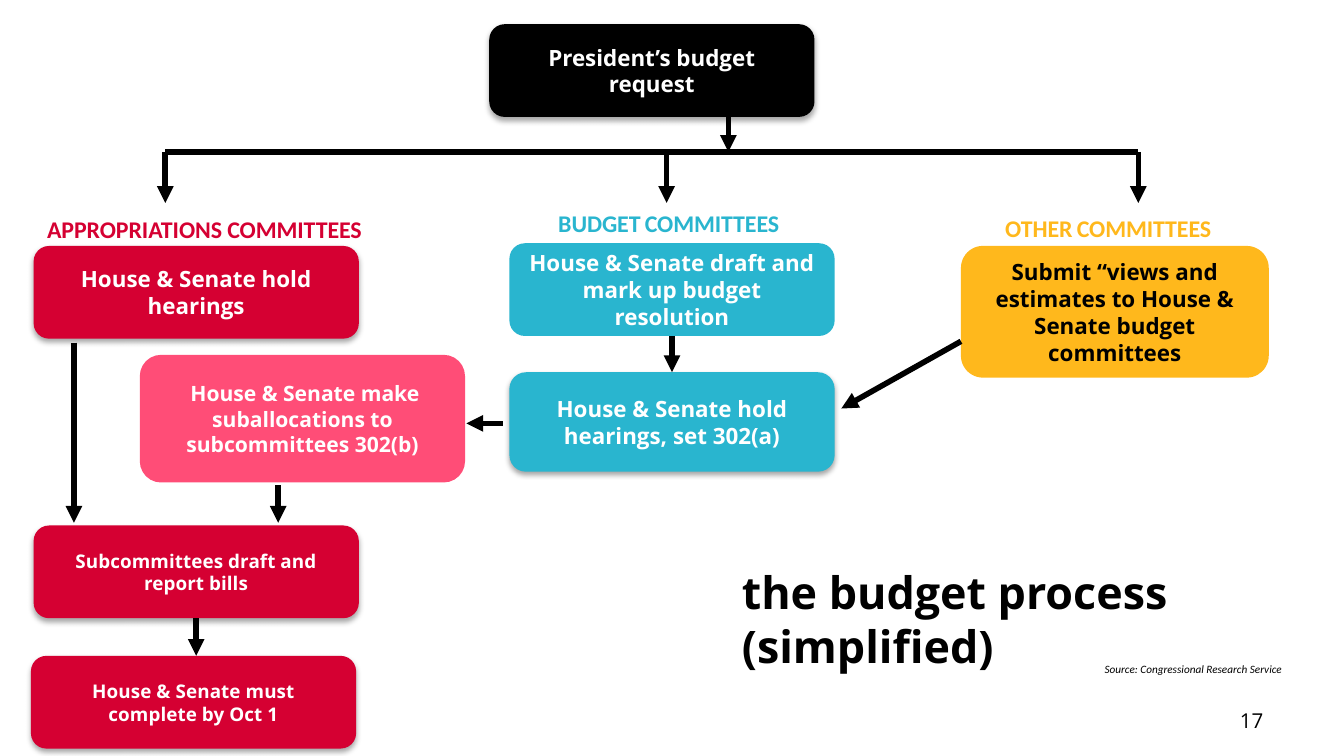
from lxml import etree
from pptx import Presentation
from pptx.dml.color import RGBColor
from pptx.enum.shapes import MSO_CONNECTOR, MSO_SHAPE
from pptx.enum.text import MSO_ANCHOR, MSO_AUTO_SIZE, PP_ALIGN
from pptx.oxml import parse_xml
from pptx.oxml.ns import nsdecls, qn
from pptx.util import Inches, Pt

STRAIGHT, ROUNDED = MSO_CONNECTOR.STRAIGHT, MSO_SHAPE.ROUNDED_RECTANGLE
LEFT, CENTER, RIGHT = PP_ALIGN.LEFT, PP_ALIGN.CENTER, PP_ALIGN.RIGHT
TOP, MIDDLE = MSO_ANCHOR.TOP, MSO_ANCHOR.MIDDLE
BLACK, WHITE, RED, PINK = "000000", "FFFFFF", "D50032", "FF4D77"
TEAL, GOLD = "29B5CF", "FFB81C"
SHADOW = (
    f'<a:effectLst {nsdecls("a")}><a:outerShdw blurRad="39370" dist="22860" '
    'dir="5400000" rotWithShape="0"><a:srgbClr val="000000">'
    '<a:alpha val="35000"/></a:srgbClr></a:outerShdw></a:effectLst>'
)


def rgb(value):
    return RGBColor.from_string(value)


def write(s, runs, color, align, anchor):
    tf = s.text_frame
    frame = {"word_wrap": True, "auto_size": MSO_AUTO_SIZE.NONE, "vertical_anchor": anchor}
    for name, value in frame.items():
        setattr(tf, name, value)
    p = tf.paragraphs[0]
    p.alignment = align
    for text, font in runs:
        r = p.add_run()
        r.text = text
        r.font.color.rgb = rgb(color)
        for name, value in font.items():
            setattr(r.font, name, value)


prs = Presentation()
prs.slide_width = Inches(10)
prs.slide_height = Inches(10) * 9 // 16
slide = prs.slides.add_slide(prs.slide_layouts[5])

title = slide.shapes.title
title.left, title.top, title.width, title.height = map(Inches, (5.42, 4.42, 4.32, 0.37))
title_font = {"name": "Open Sans", "size": Pt(24), "bold": True}
write(title, [("the budget process (simplified)", title_font)], BLACK, LEFT, MIDDLE)

boxes = {}
for key, text, at, fill, color, size, shadow in [
    ("request", "President’s budget request", (3.64, 0.18, 2.42, 0.69), BLACK, WHITE, 12, True),
    ("hearings", "House & Senate hold hearings", (0.25, 1.83, 2.42, 0.69), RED, WHITE, 12, True),
    ("bills", "Subcommittees draft and report bills", (0.25, 3.91, 2.42, 0.69), RED, WHITE, 10.13, True),
    ("deadline", "House & Senate must complete by Oct 1", (0.23, 4.88, 2.42, 0.69), RED, WHITE, 10.13, True),
    ("resolution", "House & Senate draft and mark up budget resolution", (3.79, 1.81, 2.42, 0.69), TEAL, WHITE, 12, False),
    ("302a", "House & Senate hold hearings, set 302(a)", (3.79, 2.77, 2.42, 0.74), TEAL, WHITE, 12, True),
    ("302b", "House & Senate make suballocations to subcommittees 302(b)", (1.04, 2.64, 2.42, 0.95), PINK, WHITE, 11.25, False),
    ("views", "Submit “views and estimates to House & Senate budget committees", (7.15, 1.83, 2.29, 0.98), GOLD, BLACK, 12, False),
]:
    s = slide.shapes.add_shape(ROUNDED, *map(Inches, at))
    s.shadow.inherit = False
    s.fill.solid()
    s.fill.fore_color.rgb = rgb(fill)
    s.line.fill.background()
    if shadow:
        effects = s._element.spPr.find(qn("a:effectLst"))
        effects.getparent().replace(effects, parse_xml(SHADOW))
    font = {"name": "Open Sans", "size": Pt(size), "bold": True}
    runs = [(text, font)]
    if key == "302b":
        runs.insert(0, (" ", font | {"name": "Calibri"}))
    write(s, runs, color, CENTER, MIDDLE)
    boxes[key] = s

label_font = {"name": "Calibri", "size": Pt(12.75), "bold": True}
gap_font = {"name": "Calibri", "size": Pt(10.5), "bold": False}
for word, at, color, space in [
    ("APPROPRIATIONS", (0.04, 1.55, 2.96, 0.32), RED, label_font),
    ("BUDGET", (3.78, 1.5, 2.39, 0.32), TEAL, gap_font),
    ("OTHER", (7.05, 1.54, 2.39, 0.32), GOLD, gap_font),
]:
    s = slide.shapes.add_textbox(*map(Inches, at))
    write(s, [(word, label_font), (" ", space), ("COMMITTEES", label_font)], color, CENTER, TOP)

source_font = {"name": "Calibri", "size": Pt(6), "italic": True}
number_font = {"name": "Open Sans", "size": Pt(11)}
for text, at, font, align, anchor in [
    ("Source: Congressional Research Service", (8.12, 4.88, 1.71, 0.2), source_font, LEFT, TOP),
    ("17", (7.17, 5.21, 2.33, 0.3), number_font, RIGHT, MIDDLE),
]:
    s = slide.shapes.add_textbox(*map(Inches, at))
    write(s, [(text, font)], BLACK, align, anchor)

bus_y = 1.13
drops = [((x, bus_y, x, 1.51), True, None, None) for x in (1.23, 4.96, 8.47)]
for ends, arrow, begin, end in drops + [
    ((1.23, bus_y, 8.47, bus_y), False, None, None),
    ((5.42, 0.87, 5.42, bus_y), True, None, None),
    ((0.55, 2.55, 0.55, 3.89), True, None, None),
    ((2.07, 3.61, 2.07, 3.89), True, None, None),
    ((3.74, 3.15, 3.47, 3.15), True, None, None),
    ((5, 2.5, 5, 2.77), True, ("resolution", 2), ("302a", 0)),
    ((1.46, 4.6, 1.46, 4.88), True, ("bills", 2), None),
    ((7.15, 2.54, 6.26, 3.04), True, None, None),
]:
    line = slide.shapes.add_connector(STRAIGHT, *map(Inches, ends))
    line.line.color.rgb = rgb(BLACK)
    line.line.width = Pt(3)
    if begin:
        line.begin_connect(boxes[begin[0]], begin[1])
    if end:
        line.end_connect(boxes[end[0]], end[1])
    if arrow:
        etree.SubElement(line.line._get_or_add_ln(), qn("a:tailEnd"), type="triangle")
    etree.SubElement(line._element.spPr, qn("a:effectLst"))

prs.save("out.pptx")
